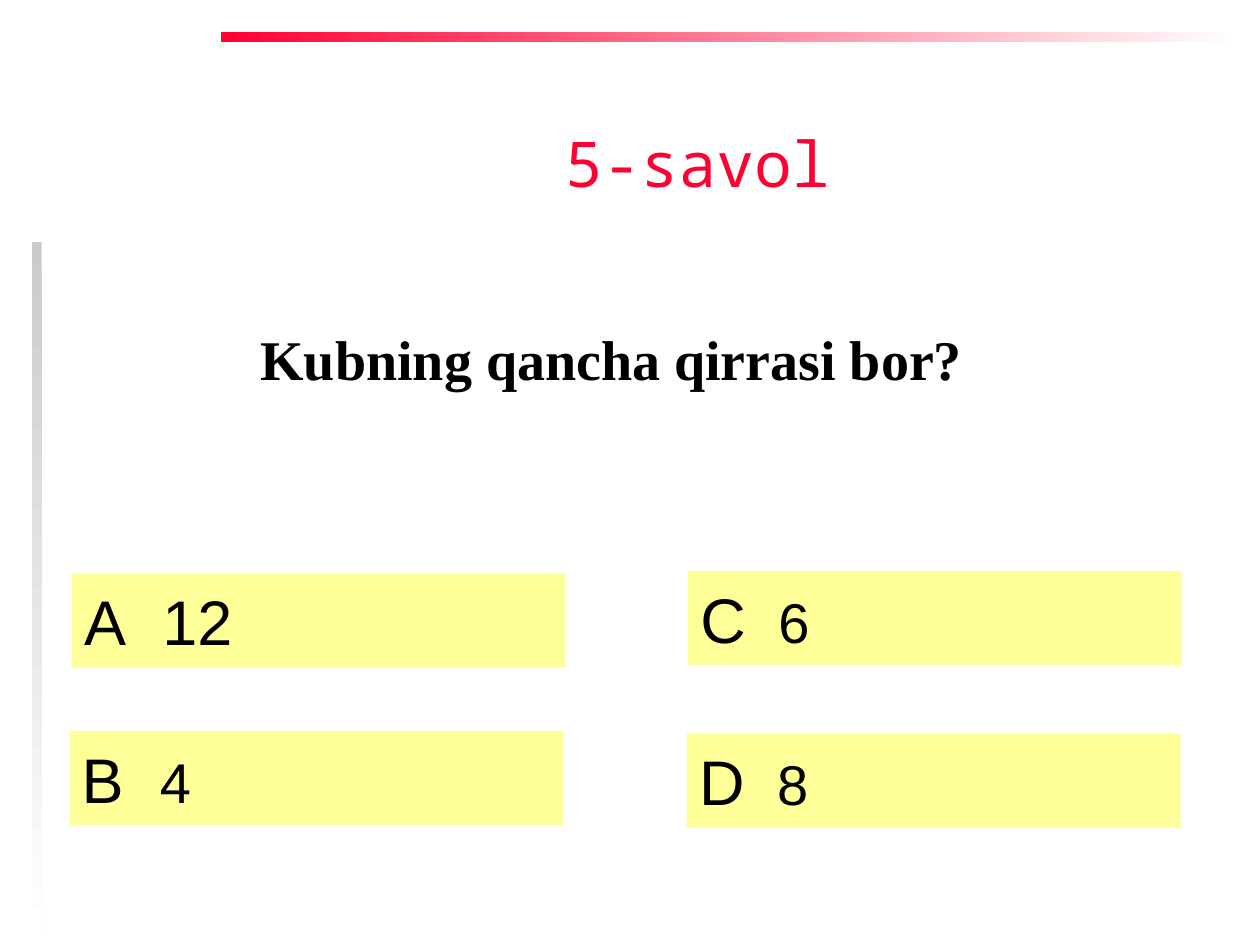
from pptx import Presentation
from pptx.dml.color import RGBColor
from pptx.enum.shapes import MSO_SHAPE as Shape
from pptx.enum.text import MSO_ANCHOR as Anchor, PP_ALIGN as Align
from pptx.oxml import parse_xml
from pptx.oxml.ns import nsdecls
from pptx.util import Inches, Pt

RED, GREY, WHITE, BLACK, YELLOW = "FF0033", "CBCBCB", "FFFFFF", "000000", "FFFF99"
WIDE, HIGH, TAB = 3.92, 0.75, 0.62
ANSWERS = [
    ("А", "12", 36, 0.57, 4.55),
    ("B", "4", 32, 0.55, 5.8),
    ("C", "6", 32, 5.46, 4.53),
    ("D", "8", 32, 5.45, 5.82),
]


def color(code):
    """Turn a hex string into a colour."""
    return RGBColor.from_string(code)


def place(box):
    """Turn a box in inches into lengths."""
    return [Inches(side) for side in box]


def style(font, size, name, code, bold=False):
    """Set the look of a font."""
    font.size, font.name, font.bold = Pt(size), name, bold
    font.color.rgb = color(code)


def add_rect(slide, box):
    """Add a plain rectangle without line or shadow."""
    rect = slide.shapes.add_shape(Shape.RECTANGLE, *place(box))
    rect.shadow.inherit = False
    rect.line.fill.background()
    return rect


def add_bar(slide, box, code, angle):
    """Add a bar that fades from a colour to white."""
    fill = add_rect(slide, box).fill
    fill.gradient()
    fill.gradient_angle = angle
    for stop, tone, pos in zip(fill.gradient_stops, (code, WHITE), (0, 1)):
        stop.color.rgb = color(tone)
        stop.position = pos


def add_text(slide, box, text, size, name, code, bold=False, wrap=True):
    """Add a centred line of text."""
    frame = slide.shapes.add_textbox(*place(box)).text_frame
    frame.word_wrap = wrap
    para = frame.paragraphs[0]
    para.text, para.alignment = text, Align.CENTER
    style(para.font, size, name, code, bold)


def add_answer(slide, box, letter, value, size):
    """Add an answer field with its letter and value."""
    rect = add_rect(slide, box)
    rect.fill.solid()
    rect.fill.fore_color.rgb = color(YELLOW)
    frame = rect.text_frame
    frame.word_wrap, frame.vertical_anchor = True, Anchor.MIDDLE
    para = frame.paragraphs[0]
    para.alignment = Align.LEFT
    props = para._p.get_or_add_pPr()
    props.append(parse_xml(
        f'<a:tabLst {nsdecls("a")}><a:tab pos="{Inches(TAB)}" algn="l"/></a:tabLst>'))
    style(para.font, 36, "Arial", BLACK)
    para.add_run().text = letter + "\t"
    run = para.add_run()
    run.text = value
    if size != 36:
        run.font.size = Pt(size)


def main():
    """Build the quiz slide."""
    deck = Presentation()
    deck.slide_width, deck.slide_height = Inches(10), Inches(7.5)
    slide = deck.slides.add_slide(deck.slide_layouts[6])
    add_bar(slide, (1.75, 0.25, 8.08, 0.08), RED, 0)
    add_bar(slide, (0.25, 1.92, 0.08, 5.5), GREY, 270)
    add_text(slide, (0.84, 2.53, 8.03, 1.57), "Kubning qancha qirrasi bor?",
             32, "Times New Roman", BLACK, bold=True)
    for letter, value, size, left, top in ANSWERS:
        add_answer(slide, (left, top, WIDE, HIGH), letter, value, size)
    add_text(slide, (4.08, 0.94, 2.61, 0.88), " 5-savol",
             36, "Noto Sans Mono", RED, wrap=False)
    deck.save("out.pptx")


if __name__ == "__main__":
    main()
